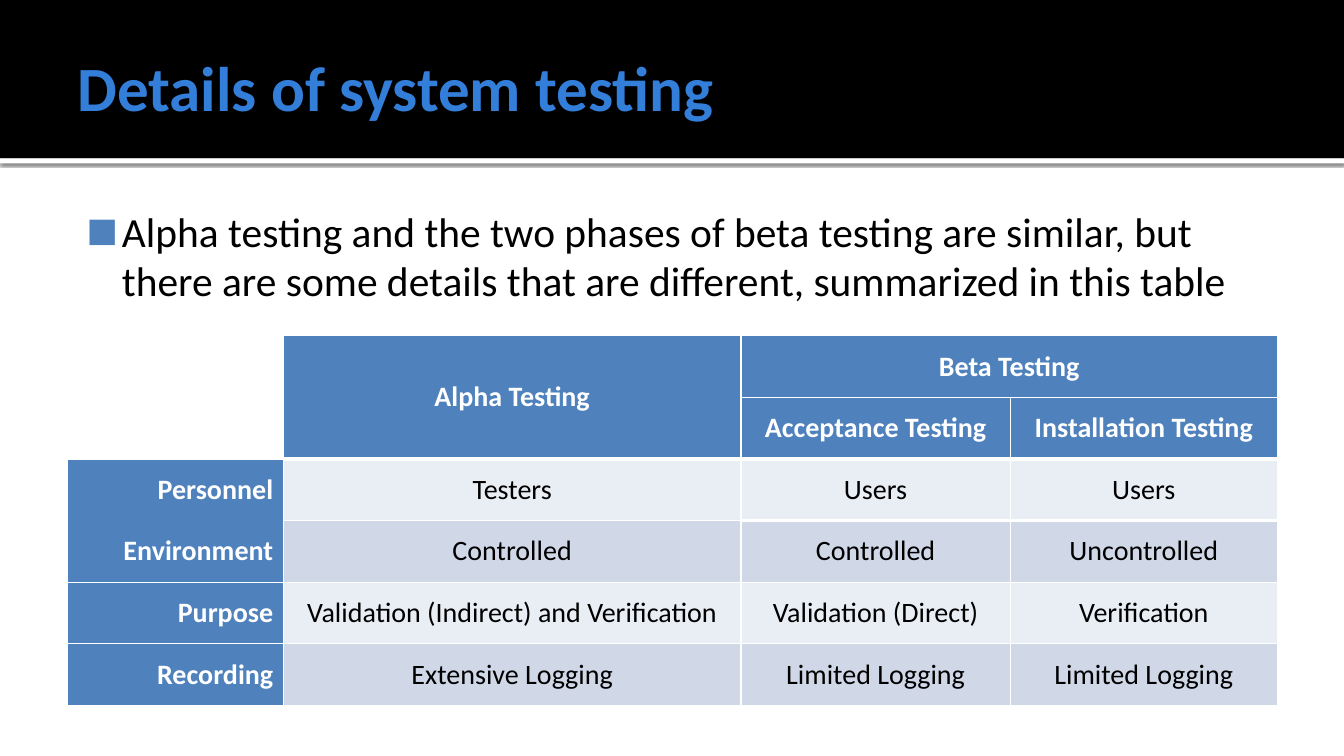
from lxml import etree
from pptx import Presentation
from pptx.dml.color import RGBColor
from pptx.enum.shapes import MSO_SHAPE
from pptx.enum.text import MSO_ANCHOR, MSO_AUTO_SIZE, PP_ALIGN
from pptx.oxml import parse_xml
from pptx.oxml.ns import nsdecls, qn
from pptx.util import Inches, Pt

RECTANGLE = MSO_SHAPE.RECTANGLE
MIDDLE, TOP = MSO_ANCHOR.MIDDLE, MSO_ANCHOR.TOP
LEFT, CENTER, RIGHT = PP_ALIGN.LEFT, PP_ALIGN.CENTER, PP_ALIGN.RIGHT
NO_FIT = MSO_AUTO_SIZE.NONE

WHITE = RGBColor(0xFF, 0xFF, 0xFF)
BLACK = RGBColor(0x00, 0x00, 0x00)
TITLE_BLUE = RGBColor(0x33, 0x7E, 0xD9)
HEADER_BLUE = RGBColor(0x4F, 0x81, 0xBD)
PALE_ROW = RGBColor(0xE9, 0xED, 0xF4)
DARK_ROW = RGBColor(0xD0, 0xD8, 0xE8)

FONT = "Calibri"
MARGIN = Inches(0.67)
CONTENT_WIDTH = Inches(12)
BAND_HEIGHT = Inches(1.57)


def style_text(frame, size, color, bold, align, anchor):
    frame.vertical_anchor = anchor
    paragraph = frame.paragraphs[0]
    paragraph.alignment = align
    for run in paragraph.runs:
        run.font.name = FONT
        run.font.size = Pt(size)
        run.font.bold = bold
        run.font.color.rgb = color


def set_borders(cell, widths):
    properties = cell._tc.get_or_add_tcPr()
    for side in "LRTB":
        width = widths.get(side, 0)
        line = etree.SubElement(properties, qn(f"a:ln{side}"), w=str(Pt(width)))
        if width:
            fill = etree.SubElement(line, qn("a:solidFill"))
            etree.SubElement(fill, qn("a:srgbClr"), val=str(WHITE))
        else:
            etree.SubElement(line, qn("a:noFill"))


prs = Presentation()
prs.slide_width = Inches(13.33)
prs.slide_height = Inches(7.5)
slide = prs.slides.add_slide(prs.slide_layouts[1])
shapes = slide.shapes

bands = [(BAND_HEIGHT, Inches(0.05), WHITE), (0, BAND_HEIGHT, BLACK)]
for depth, (top, height, color) in enumerate(bands):
    band = shapes.add_shape(RECTANGLE, 0, top, prs.slide_width, height)
    band.shadow.inherit = False
    band.fill.solid()
    band.fill.fore_color.rgb = color
    band.line.fill.background()
    shapes._spTree.insert(2 + depth, band._element)
    if color == WHITE:
        effects = band._element.spPr.find(qn("a:effectLst"))
        effects.append(parse_xml(
            f'<a:outerShdw {nsdecls("a")} blurRad="{Pt(2.5)}" dist="{Pt(0.8)}" '
            'dir="5400000" rotWithShape="0"><a:srgbClr val="000000">'
            '<a:alpha val="60000"/></a:srgbClr></a:outerShdw>'))

title = shapes.title
summary = slide.placeholders[1]
for holder, top, height, insets in (
    (title, 0.17, 1.37, (0.1, 0.05, 0.05, 0.05)),
    (summary, 1.94, 1.48, (0.06, 0.1, 0.1, 0.05)),
):
    holder.left, holder.top = MARGIN, Inches(top)
    holder.width, holder.height = CONTENT_WIDTH, Inches(height)
    frame = holder.text_frame
    frame.word_wrap = True
    frame.auto_size = NO_FIT
    frame.margin_left, frame.margin_top, frame.margin_right, frame.margin_bottom = map(Inches, insets)

title.text_frame.text = "Details of system testing"
style_text(title.text_frame, 45, TITLE_BLUE, True, LEFT, MIDDLE)

summary.text_frame.text = (
    "Alpha testing and the two phases of beta testing are similar, but there are "
    "some details that are different, summarized in this table")
style_text(summary.text_frame, 29.6, BLACK, False, LEFT, TOP)
point = summary.text_frame.paragraphs[0]
point.space_before = Pt(0)
point_format = point._p.get_or_add_pPr()
point_format.set("marL", str(Inches(0.48)))
point_format.set("indent", str(Inches(-0.35)))
bullet_color = etree.SubElement(point_format, qn("a:buClr"))
etree.SubElement(bullet_color, qn("a:srgbClr"), val=str(HEADER_BLUE))
etree.SubElement(point_format, qn("a:buSzPct"), val="80000")
etree.SubElement(point_format, qn("a:buFont"), typeface=FONT)
etree.SubElement(point_format, qn("a:buChar"), char="■")

details = [
    ["", "Alpha Testing", "Beta Testing", ""],
    ["", "", "Acceptance Testing", "Installation Testing"],
    ["Personnel", "Testers", "Users", "Users"],
    ["Environment", "Controlled", "Controlled", "Uncontrolled"],
    ["Purpose", "Validation (Indirect) and Verification", "Validation (Direct)", "Verification"],
    ["Recording", "Extensive Logging", "Limited Logging", "Limited Logging"],
]
HEADER_ROWS = 2
table = shapes.add_table(
    len(details), len(details[0]), MARGIN, Inches(3.33), CONTENT_WIDTH, Inches(3.67)).table
table.first_row = False
table.horz_banding = False
for column, width in zip(table.columns, (2.14, 4.54, 2.67, 2.65)):
    column.width = Inches(width)

for r, row in enumerate(details):
    for c, text in enumerate(row):
        cell = table.cell(r, c)
        is_header = r < HEADER_ROWS
        is_label = c == 0
        if is_header and is_label:
            set_borders(cell, {})
            cell.fill.background()
            continue

        widths = dict.fromkeys("LRTB", 1)
        if is_label:
            if r == HEADER_ROWS:
                widths["B"] = 0
            elif r == HEADER_ROWS + 1:
                widths["T"] = 0
        else:
            if r == HEADER_ROWS - 1 or (r == HEADER_ROWS and c > 1):
                widths["B"] = 3
            if r == HEADER_ROWS or (r == HEADER_ROWS + 1 and c > 1):
                widths["T"] = 3
        set_borders(cell, widths)

        strong = is_header or is_label
        cell.fill.solid()
        cell.fill.fore_color.rgb = HEADER_BLUE if strong else (PALE_ROW, DARK_ROW)[r % 2]
        if text:
            cell.text_frame.text = text
            style_text(cell.text_frame, 20, WHITE if strong else BLACK, strong,
                       RIGHT if is_label else CENTER, MIDDLE)
            cell.vertical_anchor = MIDDLE

table.cell(0, 0).merge(table.cell(1, 0))
table.cell(0, 1).merge(table.cell(1, 1))
table.cell(0, 2).merge(table.cell(0, 3))

prs.save("out.pptx")
